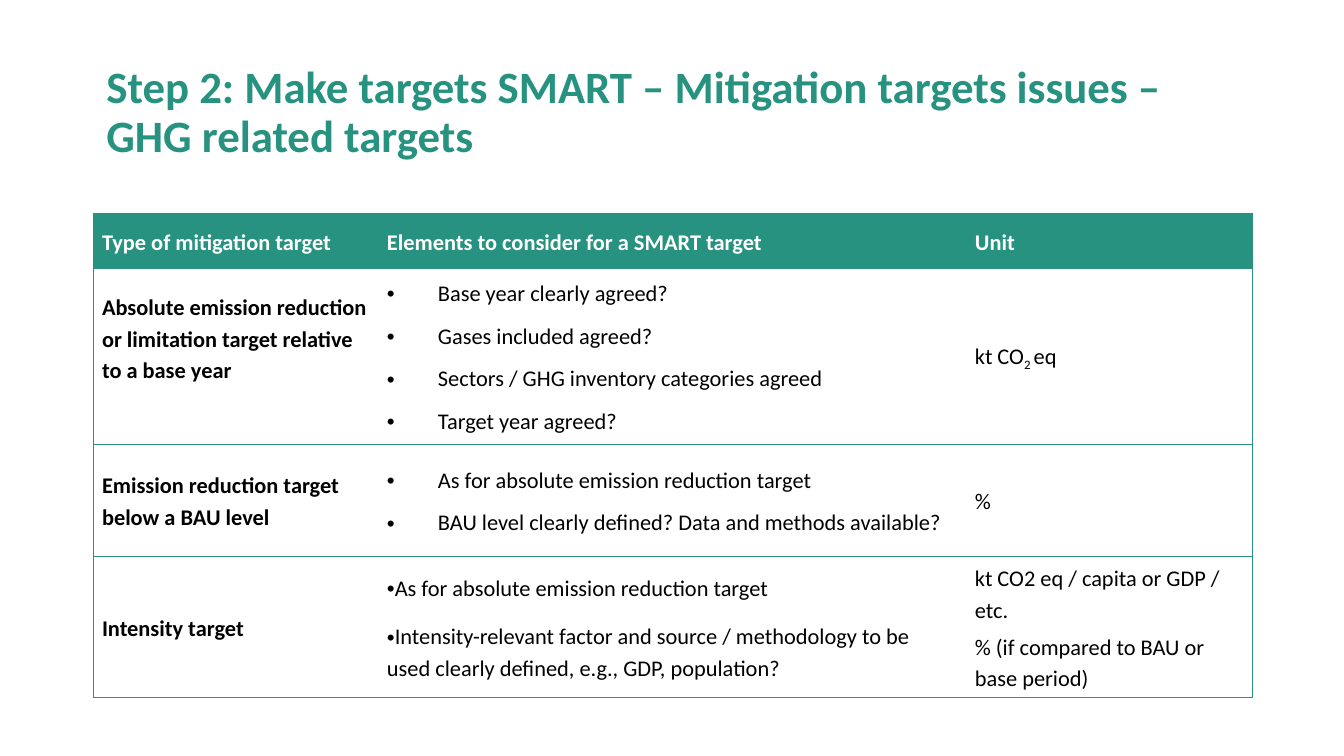
from lxml.etree import SubElement
from pptx import Presentation
from pptx.dml.color import RGBColor
from pptx.enum.text import MSO_ANCHOR, MSO_AUTO_SIZE, PP_ALIGN
from pptx.oxml.ns import qn
from pptx.util import Pt

PX = 6804
GREEN = RGBColor(0x26, 0x92, 0x7F)
WHITE = RGBColor(0xFF, 0xFF, 0xFF)
BLACK = RGBColor(0, 0, 0)
FONT = "Calibri"


def add_run(p, text, size, color, bold):
    r = p.add_run()
    r.text = text
    r.font.name = FONT
    r.font.size = Pt(size)
    r.font.bold = bold
    r.font.color.rgb = color
    return r


def add_border(tcPr, tag, visible):
    ln = SubElement(tcPr, qn(tag), w=str(Pt(0.5)))
    if visible:
        fill = SubElement(ln, qn("a:solidFill"))
        SubElement(fill, qn("a:srgbClr"), val=str(GREEN))
    else:
        SubElement(ln, qn("a:noFill"))


prs = Presentation()
prs.slide_width = 1344 * PX
prs.slide_height = 756 * PX
s = prs.slides.add_slide(prs.slide_layouts[5])

title = s.shapes.title
title.left, title.top, title.width, title.height = 93 * PX, 40 * PX, 1159 * PX, 147 * PX
tf = title.text_frame
tf.word_wrap = True
tf.auto_size = MSO_AUTO_SIZE.NONE
tf.vertical_anchor = MSO_ANCHOR.MIDDLE
p = tf.paragraphs[0]
p.alignment = PP_ALIGN.LEFT
p.line_spacing = 0.9
add_run(p, "Step 2: Make targets SMART – Mitigation targets issues – GHG related targets", 24, GREEN, True)

rows = [
    [
        [["Type of mitigation target"]],
        [["Elements to consider for a SMART target"]],
        [["Unit"]],
    ],
    [
        [["Absolute emission reduction or limitation target relative to a base year"]],
        [
            ["Base year clearly agreed?"],
            ["Gases included agreed?"],
            ["Sectors / GHG inventory categories agreed"],
            ["Target year agreed?"],
        ],
        [["kt CO", "2 ", "eq"]],
    ],
    [
        [["Emission reduction target below a BAU level"]],
        [
            ["As for absolute emission reduction target"],
            ["BAU level clearly defined? Data and methods available?"],
        ],
        [["%"]],
    ],
    [
        [["Intensity target"]],
        [
            ["As for absolute emission reduction target"],
            ["Intensity-relevant factor and source / methodology to be used clearly defined, e.g., GDP, population?"],
        ],
        [["kt CO2 eq / capita or GDP / etc."], ["% (if compared to BAU or base period)"]],
    ],
]
col_widths = [285, 588, 286]
row_heights = [55, 176, 112, 142]
last_row, last_col = len(rows) - 1, len(col_widths) - 1

table = s.shapes.add_table(
    len(rows), len(col_widths), 93 * PX, 213 * PX, sum(col_widths) * PX, sum(row_heights) * PX
).table
table.horz_banding = False
for column, width in zip(table.columns, col_widths):
    column.width = width * PX
for row, height in zip(table.rows, row_heights):
    row.height = height * PX

for i, row in enumerate(rows):
    for j, paragraphs in enumerate(row):
        cell = table.cell(i, j)
        cell.vertical_anchor = MSO_ANCHOR.MIDDLE
        cell.margin_left = cell.margin_right = 9 * PX
        cell.margin_top = 0
        cell.margin_bottom = 37 * PX if (i, j) == (1, 0) else 0
        tcPr = cell._tc.get_or_add_tcPr()
        add_border(tcPr, "a:lnL", j == 0)
        add_border(tcPr, "a:lnR", j == last_col)
        add_border(tcPr, "a:lnT", True)
        add_border(tcPr, "a:lnB", True)
        if i == 0:
            cell.fill.solid()
            cell.fill.fore_color.rgb = GREEN
        else:
            cell.fill.background()

        tf = cell.text_frame
        for n, runs in enumerate(paragraphs):
            p = tf.paragraphs[0] if n == 0 else tf.add_paragraph()
            p.line_spacing = 1.15
            p.space_before = Pt(3)
            for k, text in enumerate(runs):
                r = add_run(p, text, 12, WHITE if i == 0 else BLACK, i == 0 or j == 0)
                if k == 1:
                    r._r.get_or_add_rPr().set("baseline", "-25000")
            if i > 0 and j == 1:
                p.space_after = Pt(6 if i == last_row and n == 0 else 3)
                pPr = p._p.get_or_add_pPr()
                pPr.set("marL", str(0 if i == last_row else 51 * PX))
                pPr.set("indent", str(-51 * PX))
                SubElement(pPr, qn("a:buFont"), typeface="Arial")
                SubElement(pPr, qn("a:buChar"), char="•")

prs.save("out.pptx")
